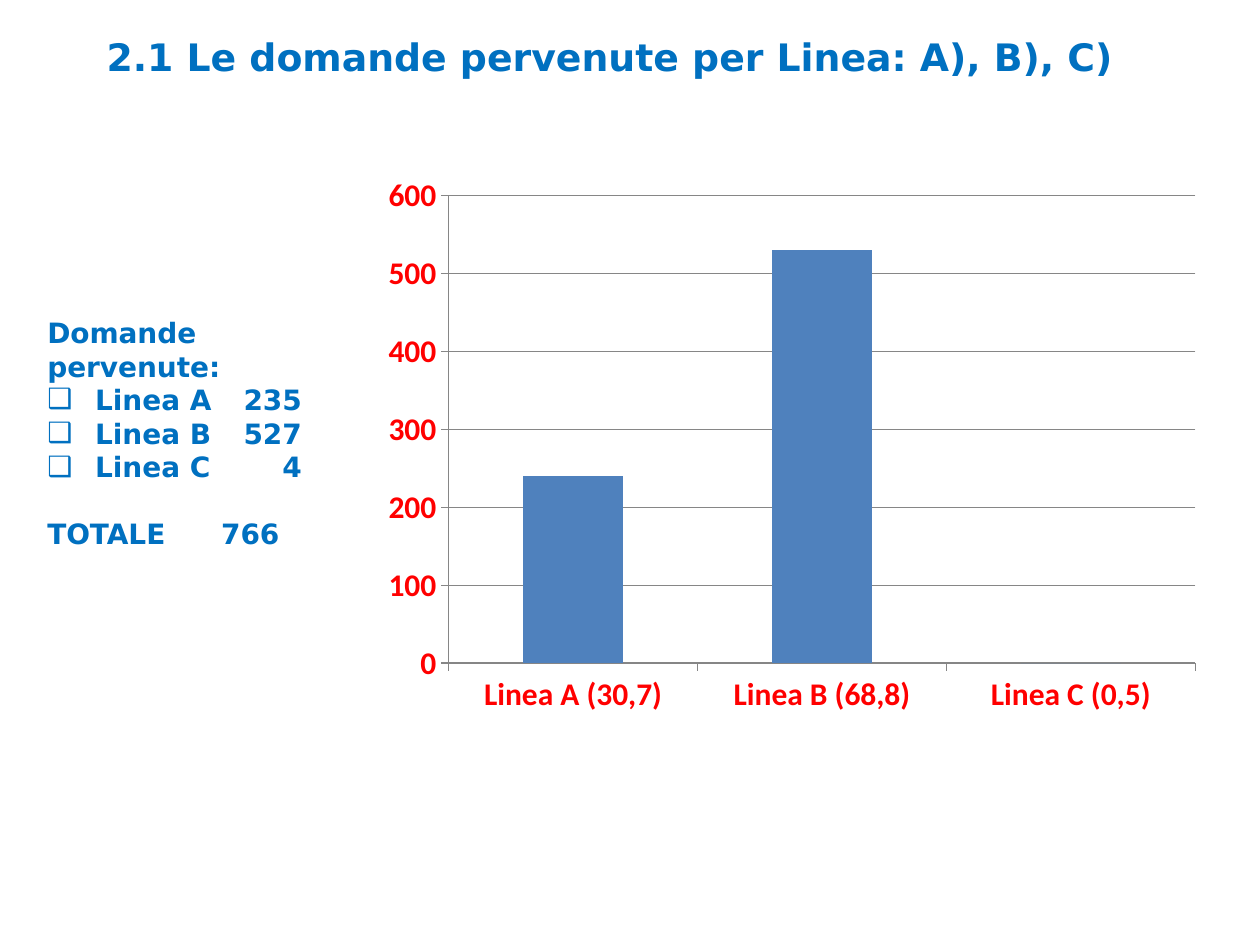
from pptx import Presentation
from pptx.chart.data import CategoryChartData as ChartData
from pptx.dml.color import RGBColor
from pptx.enum.chart import XL_CHART_TYPE as Kind, XL_TICK_MARK as Tick
from pptx.enum.text import MSO_ANCHOR as Anchor, MSO_AUTO_SIZE as Fit, PP_ALIGN as Align
from pptx.oxml.ns import qn
from pptx.util import Inches, Pt
from lxml.etree import SubElement as Sub

WIDTH, HEIGHT = Inches(10), Inches(7.5)
BLUE = RGBColor(0x00, 0x70, 0xC0)
RED = RGBColor(0xFF, 0x00, 0x00)
STEEL = RGBColor(0x4F, 0x81, 0xBD)
GRAY = RGBColor(0x86, 0x86, 0x86)
FACE = "DejaVu Sans"
LINES = (("Linea A", 235, 30.7), ("Linea B", 527, 68.8), ("Linea C", 4, 0.5))


def area(left, top, width, height):
    """Turn percent shares of the slide into lengths."""
    return (int(left * WIDTH / 100), int(top * HEIGHT / 100),
            int(width * WIDTH / 100), int(height * HEIGHT / 100))


def place(shape, box):
    """Move a placeholder and ready its text frame."""
    shape.left, shape.top, shape.width, shape.height = box
    frame = shape.text_frame
    frame.auto_size = Fit.NONE
    frame.word_wrap = True
    frame.vertical_anchor = Anchor.MIDDLE
    return frame


def style(font, face, size, color):
    """Give a font its face, size and colour, in bold."""
    font.name, font.size, font.bold = face, Pt(size), True
    font.color.rgb = color


def add_title(slide, text):
    """Fill the title placeholder."""
    frame = place(slide.shapes.title, area(5.9, 2.8, 85, 6.25))
    frame.text = text
    para = frame.paragraphs[0]
    para.alignment = Align.CENTER
    style(para.runs[0].font, FACE, 21.6, BLUE)


def set_list(para, mark):
    """Set the hanging indent, the bullet and the number's tab stop."""
    props = para._p.get_or_add_pPr()
    props.set("marL", str(Inches(0.38)))
    props.set("indent", str(-Inches(0.38)))
    if mark:
        Sub(props, qn("a:buFont"), typeface=FACE)
        Sub(props, qn("a:buChar"), char=mark)
    else:
        Sub(props, qn("a:buNone"))
    tabs = Sub(props, qn("a:tabLst"))
    stop = Inches(2.02 if mark else 2.09)
    Sub(tabs, qn("a:tab"), pos=str(stop), algn="r")


def add_list(slide):
    """Fill the body placeholder with the counts and their total."""
    frame = place(slide.placeholders[1], area(2.75, 29, 26, 33.6))
    total = sum(count for _, count, _ in LINES)
    rows = [("Domande", None), ("pervenute:", None)]
    rows += [(f"{name}\t{count}", "❑") for name, count, _ in LINES]
    rows.append((f"TOTALE\t{total}", None))
    frame.text = "\n".join(text for text, _ in rows)
    for para, (_, mark) in zip(frame.paragraphs, rows):
        para.space_before = Pt(0)
        style(para.runs[0].font, FACE, 16, BLUE)
        set_list(para, mark)
    frame.paragraphs[-1].space_before = Pt(19)


def rule(line):
    """Give a chart line its colour and width."""
    line.color.rgb = GRAY
    line.width = Pt(0.75)


def add_bars(slide):
    """Draw the column chart of the counts, rounded to tens."""
    data = ChartData()
    data.categories = [f"{name} ({share})".replace(".", ",")
                       for name, _, share in LINES]
    data.add_series("Domande", [round(count, -1) for _, count, _ in LINES])
    box = area(29.5, 17.5, 66.7, 59.2)
    chart = slide.shapes.add_chart(Kind.COLUMN_CLUSTERED, *box, data).chart
    chart.has_legend = chart.has_title = False
    style(chart.font, "Calibri", 18, RED)
    plot = chart.plots[0]
    plot.gap_width, plot.vary_by_categories = 150, False
    fill = plot.series[0].format.fill
    fill.solid()
    fill.fore_color.rgb = STEEL
    scale = chart.value_axis
    scale.minimum_scale, scale.maximum_scale, scale.major_unit = 0, 600, 100
    scale.has_major_gridlines = True
    for axis in (chart.category_axis, scale):
        axis.major_tick_mark = Tick.OUTSIDE
        rule(axis.format.line)
    rule(scale.major_gridlines.format.line)


def main():
    """Build and save the slide."""
    deck = Presentation()
    deck.slide_width, deck.slide_height = WIDTH, HEIGHT
    slide = deck.slides.add_slide(deck.slide_layouts[1])
    add_title(slide, "2.1 Le domande pervenute per Linea: A), B), C)")
    add_bars(slide)
    add_list(slide)
    deck.save("out.pptx")


if __name__ == "__main__":
    main()
